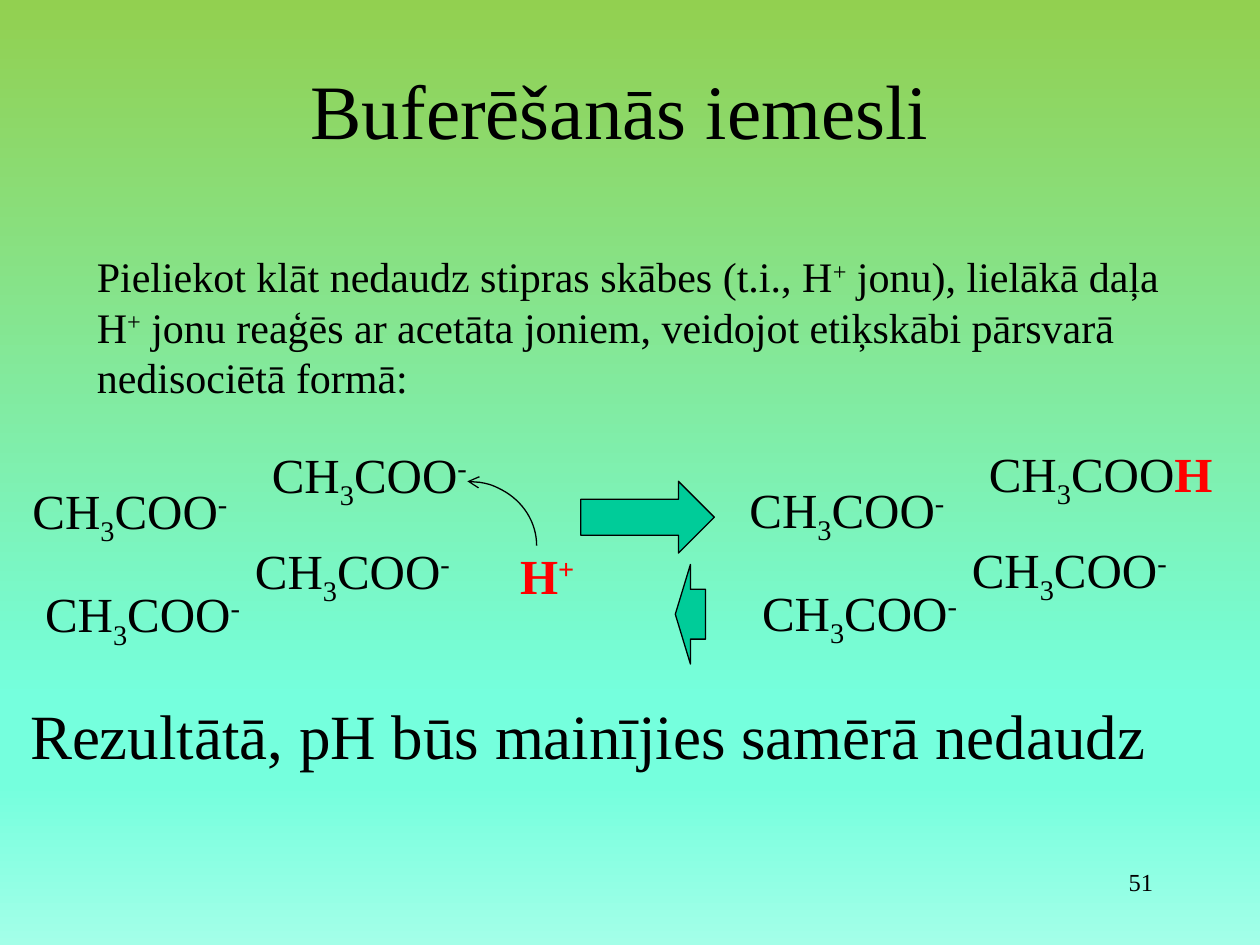
from lxml.etree import SubElement
from pptx import Presentation
from pptx.dml.color import RGBColor
from pptx.enum.shapes import MSO_SHAPE
from pptx.enum.text import MSO_ANCHOR, MSO_AUTO_SIZE, PP_ALIGN
from pptx.oxml.ns import qn
from pptx.util import Inches, Pt

COLUMNS, ROWS = 100, 75
WIDTH, HEIGHT = Inches(10), Inches(7.5)
FONT = "Times New Roman"
COLORS = {"text": "000000", "proton": "FF0000", "arrow": "00CC99"}
BACKGROUND = [(0, "92D050"), (74, "75FFDD"), (83, "75FFDD"), (100, "A3FFE8")]
SUB, SUPER = -25, 30
ACETATE = [("CH",), ("3", SUB), ("COO",), ("-", SUPER)]
ACETIC_ACID = [("CH",), ("3", SUB), ("COO",), ("H", 0, "proton")]
PROTON = [("H", 0, "proton"), ("+", SUPER, "proton")]
EXPLANATION = [
    ("Pieliekot klāt nedaudz stipras skābes (t.i., H",), ("+", SUPER),
    (" jonu), lielākā daļa H",), ("+", SUPER),
    (" jonu reaģēs ar acetāta joniem, veidojot etiķskābi pārsvarā nedisociētā formā:",),
]
CLUSTER_OFFSETS = [(19, 0), (0, 2.85), (17.65, 7.6), (1, 11.05)]


def place(box):
    """Convert a box in grid columns and rows to slide lengths."""
    left, top, width, height = box
    return (int(left * WIDTH / COLUMNS), int(top * HEIGHT / ROWS),
            int(width * WIDTH / COLUMNS), int(height * HEIGHT / ROWS))


def add_text(slide, box, runs, size, align=PP_ALIGN.LEFT,
             anchor=MSO_ANCHOR.TOP, wrap=True, grow=True):
    """Add a text box made of (text, baseline, colour name) runs."""
    frame = slide.shapes.add_textbox(*place(box)).text_frame
    frame.word_wrap = wrap
    frame.auto_size = MSO_AUTO_SIZE.SHAPE_TO_FIT_TEXT if grow else MSO_AUTO_SIZE.NONE
    frame.vertical_anchor = anchor
    paragraph = frame.paragraphs[0]
    paragraph.alignment = align
    for text, baseline, color in ((*run, 0, "text")[:1] + (*run[1:], *(0, "text")[len(run) - 1:])
                                  for run in runs):
        run = paragraph.add_run()
        run.text = text
        run.font.name = FONT
        run.font.size = Pt(size)
        run.font.bold = color == "proton"
        run.font.color.rgb = RGBColor.from_string(COLORS[color])
        if baseline:
            run.font._element.set("baseline", str(baseline * 1000))


def add_outlined(slide, kind, box, fill=None):
    """Add a thinly outlined preset shape, filled when a colour name is given."""
    shape = slide.shapes.add_shape(kind, *place(box))
    shape.shadow.inherit = False
    shape.line.color.rgb = RGBColor.from_string(COLORS["text"])
    shape.line.width = Pt(0.75)
    if fill:
        shape.fill.solid()
        shape.fill.fore_color.rgb = RGBColor.from_string(COLORS[fill])
    else:
        shape.fill.background()
    return shape


def paint_background(slide):
    """Fill the slide with a gradient running from top to bottom."""
    fill = slide.background.fill
    fill.gradient()
    fill.gradient_angle = 270
    stops = slide.element.find(".//" + qn("a:gsLst"))
    for stop in list(stops):
        stops.remove(stop)
    for position, color in BACKGROUND:
        stop = SubElement(stops, qn("a:gs"), pos=str(position * 1000))
        SubElement(stop, qn("a:srgbClr"), val=color)


def add_cluster(slide, left, top, molecules):
    """Scatter four molecules from the given corner of the grid."""
    for (column, row), molecule in zip(CLUSTER_OFFSETS, molecules):
        width = 20.1 if molecule is ACETIC_ACID else 18
        add_text(slide, (left + column, top + row, width, 5.7), molecule, 28, wrap=False)


def add_reaction(slide, left, top):
    """Draw the proton, its path to an acetate ion and the two reaction arrows."""
    add_text(slide, (left + 8.7, top + 4.6, 8.6, 5.7), PROTON, 28)
    arc = add_outlined(slide, MSO_SHAPE.ARC, (left, top, 11, 10.2))
    SubElement(arc.line._get_or_add_ln(), qn("a:headEnd"), type="arrow")
    add_outlined(slide, MSO_SHAPE.RIGHT_ARROW, (left + 14.5, top, 10.6, 5.7), "arrow")
    add_outlined(slide, MSO_SHAPE.LEFT_ARROW, (left + 22, top + 6.6, 2.4, 7.9), "arrow")


def build_slide(presentation):
    """Build the slide on the causes of buffering."""
    slide = presentation.slides.add_slide(presentation.slide_layouts[6])
    paint_background(slide)
    add_text(slide, (6.7, 2.4, 85, 12.5), [("Buferēšanās iemesli",)], 44,
             PP_ALIGN.CENTER, MSO_ANCHOR.MIDDLE, grow=False)
    add_text(slide, (6.7, 19.4, 87.4, 13.1), EXPLANATION, 24)
    add_cluster(slide, 1.6, 34.8, [ACETATE] * 4)
    add_reaction(slide, 31.6, 38.2)
    add_cluster(slide, 58.5, 34.7, [ACETIC_ACID] + [ACETATE] * 3)
    add_text(slide, (1.4, 54.8, 96.2, 7.1),
             [("Rezultātā, pH būs mainījies samērā nedaudz",)], 36)
    add_text(slide, (71.7, 68.3, 20.8, 5), [("51",)], 14, PP_ALIGN.RIGHT, grow=False)


def main():
    """Create and save the presentation."""
    presentation = Presentation()
    presentation.slide_width, presentation.slide_height = WIDTH, HEIGHT
    build_slide(presentation)
    presentation.save("out.pptx")


if __name__ == "__main__":
    main()
